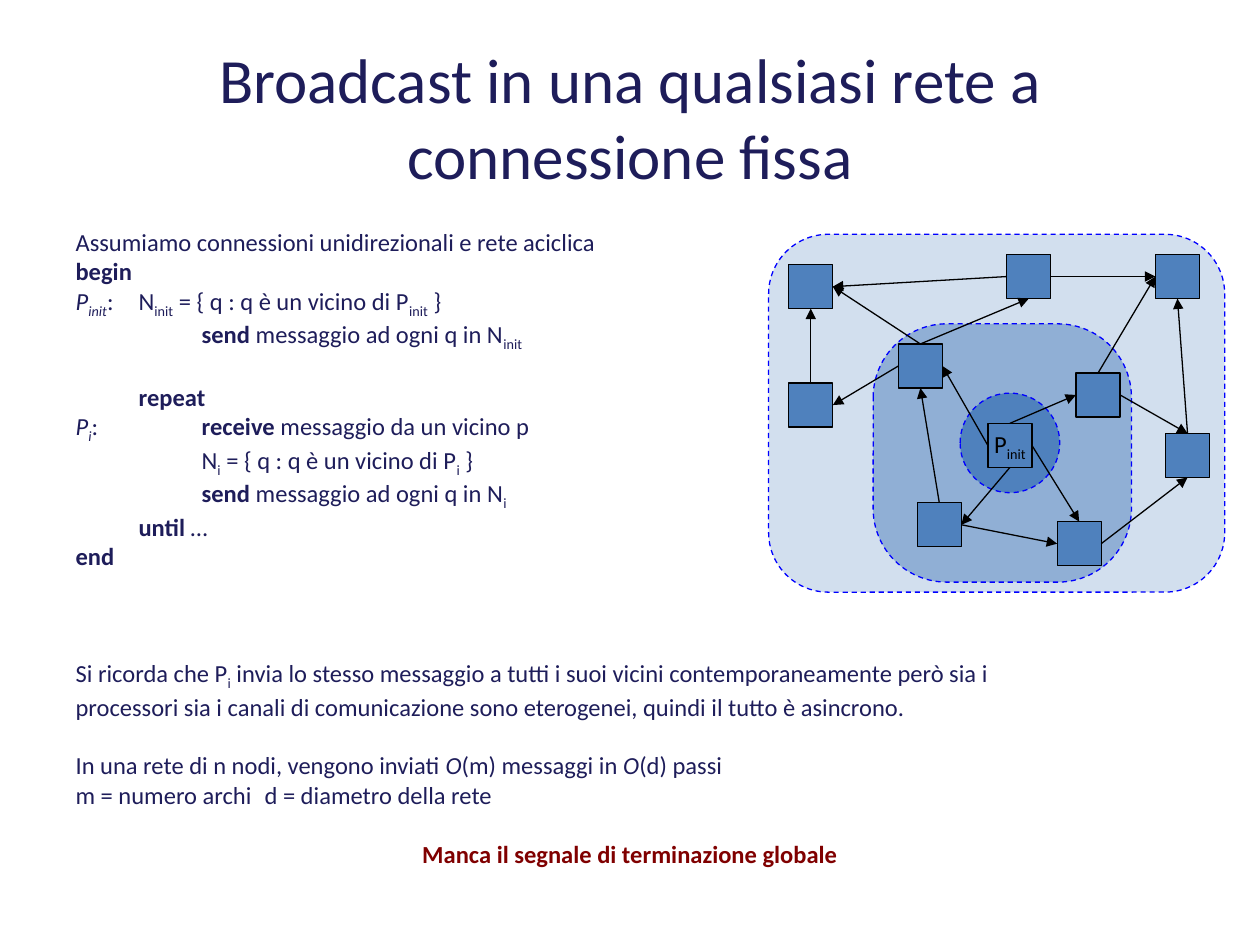
from lxml.etree import SubElement
from pptx import Presentation
from pptx.dml.color import RGBColor
from pptx.enum.dml import MSO_LINE
from pptx.enum.shapes import MSO_CONNECTOR, MSO_SHAPE
from pptx.enum.text import MSO_ANCHOR, MSO_AUTO_SIZE, PP_ALIGN
from pptx.oxml.ns import qn
from pptx.util import Inches, Pt

NAVY, BLUE, DASH_BLUE, BLACK, RED = "1E1D5A", "4F81BD", "0000FF", "000000", "800000"
TOP, LEFT, BOTTOM, RIGHT = range(4)  # connection sites of a rectangle
NODE_SIZE = 0.35
BLANK_LINE = 16.75  # points
TAB_STOPS = (0.38, 0.88, 2.32)

BOLD = {"bold": True}
ITALIC = {"italic": True}
SUB = {"subscript": True}
ITALIC_SUB = {**ITALIC, **SUB}

# (blank lines before, runs); a run is a text or a text with its format
BODY = [
    (0, ["Assumiamo connessioni unidirezionali e rete aciclica"]),
    (0, [("begin", BOLD)]),
    (0, [("P", ITALIC), ("init", ITALIC_SUB), ":\tN", ("init", SUB),
         " = { q : q è un vicino di P", ("init", SUB), " }"]),
    (0, [("\t\tsend ", BOLD), "messaggio ad ogni q in N", ("init", SUB)]),
    (1, [("\trepeat", BOLD)]),
    (0, [("P", ITALIC), ("i", ITALIC_SUB), ":", ("\t\treceive", BOLD),
         " messaggio da un vicino p"]),
    (0, ["\t\tN", ("i", SUB), " = { q : q è un vicino di P", ("i", SUB), " }"]),
    (0, [("\t\tsend", BOLD), " messaggio ad ogni q in N", ("i", SUB)]),
    (0, [("\tuntil", BOLD), " …"]),
    (0, [("end", BOLD)]),
    (3, ["Si ricorda che P", ("i", SUB),
         " invia lo stesso messaggio a tutti i suoi vicini contemporaneamente però sia i"]),
    (0, ["processori sia i canali di comunicazione sono eterogenei, "
         "quindi il tutto è asincrono."]),
    (1, ["In una rete di n nodi, vengono inviati ", ("O", ITALIC), "(m) messaggi in ",
         ("O", ITALIC), "(d) passi"]),
    (0, ["m = numero archi\td = diametro della rete"]),
    (1, [("Manca il segnale di terminazione globale", {"bold": True, "color": RED})]),
]

NODES = {
    "east": (8.54, 2.96),
    "init": (7.84, 3.36),
    "south east": (8.39, 4.14),
    "south west": (7.28, 3.99),
    "inner west": (7.13, 2.73),
    "north": (7.99, 2.02),
    "north east": (9.17, 2.02),
    "far east": (9.25, 3.44),
    "west": (6.26, 3.04),
    "north west": (6.26, 2.1),
}

EDGES = [
    ("init", BOTTOM, "south west", RIGHT),
    ("init", LEFT, "inner west", RIGHT),
    ("init", TOP, "east", LEFT),
    ("init", RIGHT, "south east", TOP),
    ("south east", RIGHT, "far east", BOTTOM),
    ("east", RIGHT, "far east", TOP),
    ("south west", RIGHT, "south east", LEFT),
    ("south west", TOP, "inner west", BOTTOM),
    ("inner west", LEFT, "west", RIGHT),
    ("west", TOP, "north west", BOTTOM),
    ("inner west", TOP, "north west", RIGHT),
    ("inner west", TOP, "north", BOTTOM),
    ("east", TOP, "north east", LEFT),
    ("far east", TOP, "north east", BOTTOM),
    ("north", LEFT, "north west", RIGHT),
    ("north", RIGHT, "north east", LEFT),
]


def rgb(color):
    return RGBColor.from_string(color)


def write(paragraph, text, size=14, color=NAVY, bold=False, italic=False, subscript=False):
    """Append one formatted run to the paragraph."""
    run = paragraph.add_run()
    run.text = text
    font = run.font
    font.name, font.size, font.bold, font.italic = "Calibri", Pt(size), bold, italic
    font.color.rgb = rgb(color)
    if subscript:
        run._r.get_or_add_rPr().set("baseline", "-25000")


def set_plain_layout(paragraph):
    """Drop the bullet and the hanging indent, and set the tab stops."""
    properties = paragraph._p.get_or_add_pPr()
    properties.set("marL", "0")
    properties.set("indent", "0")
    SubElement(properties, qn("a:buNone"))
    tabs = SubElement(properties, qn("a:tabLst"))
    for stop in TAB_STOPS:
        SubElement(tabs, qn("a:tab"), pos=str(Inches(stop)), algn="l")


class NetworkSlide:
    def __init__(self, presentation):
        self.slide = presentation.slides.add_slide(presentation.slide_layouts[1])
        self.shapes = self.slide.shapes

    def place(self, placeholder, left, top, width, height):
        placeholder.left, placeholder.top = Inches(left), Inches(top)
        placeholder.width, placeholder.height = Inches(width), Inches(height)
        frame = placeholder.text_frame
        frame.auto_size = MSO_AUTO_SIZE.NONE
        return frame

    def title(self, text):
        frame = self.place(self.shapes.title, 0.5, 0.3, 9, 1.25)
        frame.vertical_anchor = MSO_ANCHOR.MIDDLE
        paragraph = frame.paragraphs[0]
        paragraph.alignment = PP_ALIGN.CENTER
        write(paragraph, text, size=36)

    def body(self, rows):
        frame = self.place(self.slide.placeholders[1], 0.5, 1.75, 9, 4.95)
        for index, (blank_lines, runs) in enumerate(rows):
            paragraph = frame.add_paragraph() if index else frame.paragraphs[0]
            paragraph.space_before = Pt(blank_lines * BLANK_LINE)
            set_plain_layout(paragraph)
            for run in runs:
                text, style = (run, {}) if isinstance(run, str) else run
                write(paragraph, text, **style)
        paragraph.alignment = PP_ALIGN.CENTER

    def shape(self, kind, left, top, width, height, line=BLACK, dashed=False, opacity=100):
        shape = self.shapes.add_shape(
            kind, Inches(left), Inches(top), Inches(width), Inches(height))
        shape.shadow.inherit = False
        shape.fill.solid()
        shape.fill.fore_color.rgb = rgb(BLUE)
        if opacity < 100:
            color = shape._element.spPr.find(qn("a:solidFill"))[0]
            SubElement(color, qn("a:alpha"), val=str(opacity * 1000))
        shape.line.color.rgb = rgb(line)
        shape.line.width = Pt(0.75)
        if dashed:
            shape.line.dash_style = MSO_LINE.DASH
        return shape

    def region(self, kind, left, top, width, height, opacity=100):
        return self.shape(kind, left, top, width, height, DASH_BLUE, True, opacity)

    def node(self, left, top):
        return self.shape(MSO_SHAPE.RECTANGLE, left, top, NODE_SIZE, NODE_SIZE)

    def label(self, node, runs):
        frame = node.text_frame
        frame.word_wrap = False
        frame.vertical_anchor = MSO_ANCHOR.MIDDLE
        paragraph = frame.paragraphs[0]
        paragraph.alignment = PP_ALIGN.CENTER
        for text, style in runs:
            write(paragraph, text, color=BLACK, **style)

    def arrow(self, source, source_site, target, target_site):
        connector = self.shapes.add_connector(MSO_CONNECTOR.STRAIGHT, 0, 0, 0, 0)
        connector.begin_connect(source, source_site)
        connector.end_connect(target, target_site)
        connector.line.color.rgb = rgb(BLACK)
        connector.line.width = Pt(0.75)
        SubElement(connector.line._get_or_add_ln(), qn("a:tailEnd"), type="triangle")
        SubElement(connector._element.spPr, qn("a:effectLst"))


def main():
    presentation = Presentation()
    presentation.slide_width, presentation.slide_height = Inches(10), Inches(7.5)
    page = NetworkSlide(presentation)
    page.title("Broadcast in una qualsiasi rete a connessione fissa")
    page.body(BODY)

    page.region(MSO_SHAPE.FLOWCHART_ALTERNATE_PROCESS, 6.1, 1.86, 3.62, 2.84, opacity=25)
    neighbours = page.region(MSO_SHAPE.ROUNDED_RECTANGLE, 6.93, 2.57, 2.05, 2.05, opacity=50)
    neighbours.adjustments[0] = 0.285
    page.region(MSO_SHAPE.OVAL, 7.62, 3.12, 0.79, 0.79)

    nodes = {name: page.node(*position) for name, position in NODES.items()}
    page.label(nodes["init"], [("P", {}), ("init", SUB)])
    for source, source_site, target, target_site in EDGES:
        page.arrow(nodes[source], source_site, nodes[target], target_site)

    presentation.save("out.pptx")


if __name__ == "__main__":
    main()
